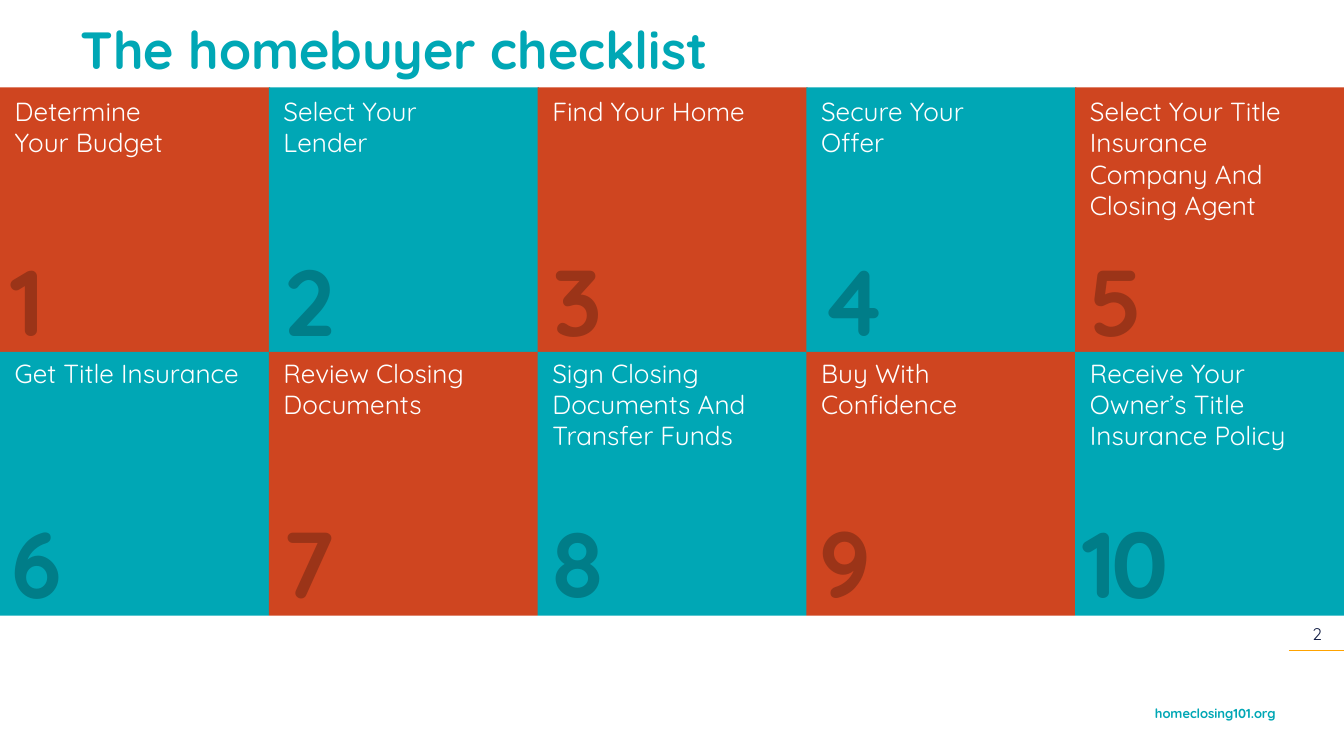
from pptx import Presentation
from pptx.util import Pt
from pptx.dml.color import RGBColor
from pptx.enum import shapes, text
from pptx.oxml import parse_xml
from pptx.oxml.ns import nsdecls

FONT = "Quicksand"
TEAL, RUST, WHITE, NAVY, AMBER = "00A7B5", "CF4520", "FFFFFF", "101B42", "FFA300"
DIGIT_COLORS = {TEAL: "007D88", RUST: "9B3418"}
TITLE = "The homebuyer checklist"
STEPS = [
    ("Determine Your Budget", 106, -1.5),
    ("Select Your Lender", 105, 1.5),
    ("Find Your Home", 146, 1.5),
    ("Secure Your Offer", 117, 0.7),
    ("Select Your Title Insurance Company And Closing Agent", 141, 0.7),
    ("Get Title Insurance", 145, -0.7),
    ("Review Closing Documents", 144, 0),
    ("Sign Closing Documents And Transfer Funds", 137, 0),
    ("Buy With Confidence", 143, 0),
    ("Receive Your Owner’s Title Insurance Policy", 132, -2.9),
]
COLS, TOP, PITCH_X, PITCH_Y = 5, 46.8, 144, 141.8
TILE_W = 144.7


def rgb(value):
    return RGBColor.from_string(value)


def add_rect(x, y, w, h, color):
    sp = s.shapes.add_shape(shapes.MSO_SHAPE.RECTANGLE, Pt(x), Pt(y), Pt(w), Pt(h))
    sp.shadow.inherit = False
    sp.fill.solid()
    sp.fill.fore_color.rgb = rgb(color)
    sp.line.fill.background()


def add_text(content, x, y, w, h, size=14, color=WHITE, bold=False,
             align=text.PP_ALIGN.LEFT, wrap=True, spacing=0, sp=None):
    if sp is None:
        sp = s.shapes.add_textbox(0, 0, 0, 0)
    sp.left, sp.top, sp.width, sp.height = Pt(x), Pt(y), Pt(w), Pt(h)
    tf = sp.text_frame
    tf.word_wrap = wrap
    tf.auto_size = text.MSO_AUTO_SIZE.NONE
    tf.vertical_anchor = text.MSO_ANCHOR.TOP
    p = tf.paragraphs[0]
    p.alignment = align
    r = p.add_run()
    r.text = content
    r.font.name, r.font.size, r.font.bold = FONT, Pt(size), bold
    r.font.color.rgb = rgb(color)
    if spacing:
        r.font._element.set("spc", str(spacing * 100))


prs = Presentation()
prs.slide_width, prs.slide_height = Pt(720), Pt(405)
s = prs.slides.add_slide(prs.slide_layouts[5])

add_text("homeclosing101.org", 148.3, 374.4, 542.2, 15.8, size=7, color=TEAL,
         bold=True, align=text.PP_ALIGN.RIGHT)
add_text("2", 691.2, 330.5, 28.8, 18, size=9, color=NAVY, align=text.PP_ALIGN.CENTER)
rule = s.shapes.add_connector(shapes.MSO_CONNECTOR.STRAIGHT,
                              Pt(690.5), Pt(348.5), Pt(722.2), Pt(348.5))
rule.line.color.rgb = rgb(AMBER)
rule.line.width = Pt(0.5)
rule._element.spPr.append(parse_xml(f"<a:effectLst {nsdecls('a')}/>"))

tiles = []
for i, step in enumerate(STEPS):
    row, col = divmod(i, COLS)
    color = TEAL if i % 2 else RUST
    if row:
        color = RUST if i % 2 == 0 else TEAL
    color = (RUST, TEAL)[(row + col) % 2]
    tiles.append((i + 1, col * PITCH_X, TOP + row * PITCH_Y, color, step))

for number, x, y, color, step in tiles:
    add_rect(x, y, TILE_W, PITCH_Y, color)
add_rect(0, 329.8, 720, 5, WHITE)

add_text(TITLE, 36, 5.8, 488.2, 49.7, size=28, color=TEAL, bold=True, sp=s.shapes.title)

for number, x, y, color, (label, width, shift) in tiles:
    lift = 0 if y == TOP else 1.5
    add_text(label, x + 0.8, y + 0.7 - lift, width, 41)
    add_text(str(number), x + shift, y + 80 - lift, 64.8 if number > 9 else 42.5, 67.7,
             size=50, color=DIGIT_COLORS[color], bold=True, wrap=False,
             spacing=-3 if number > 9 else 0)

prs.save("out.pptx")
